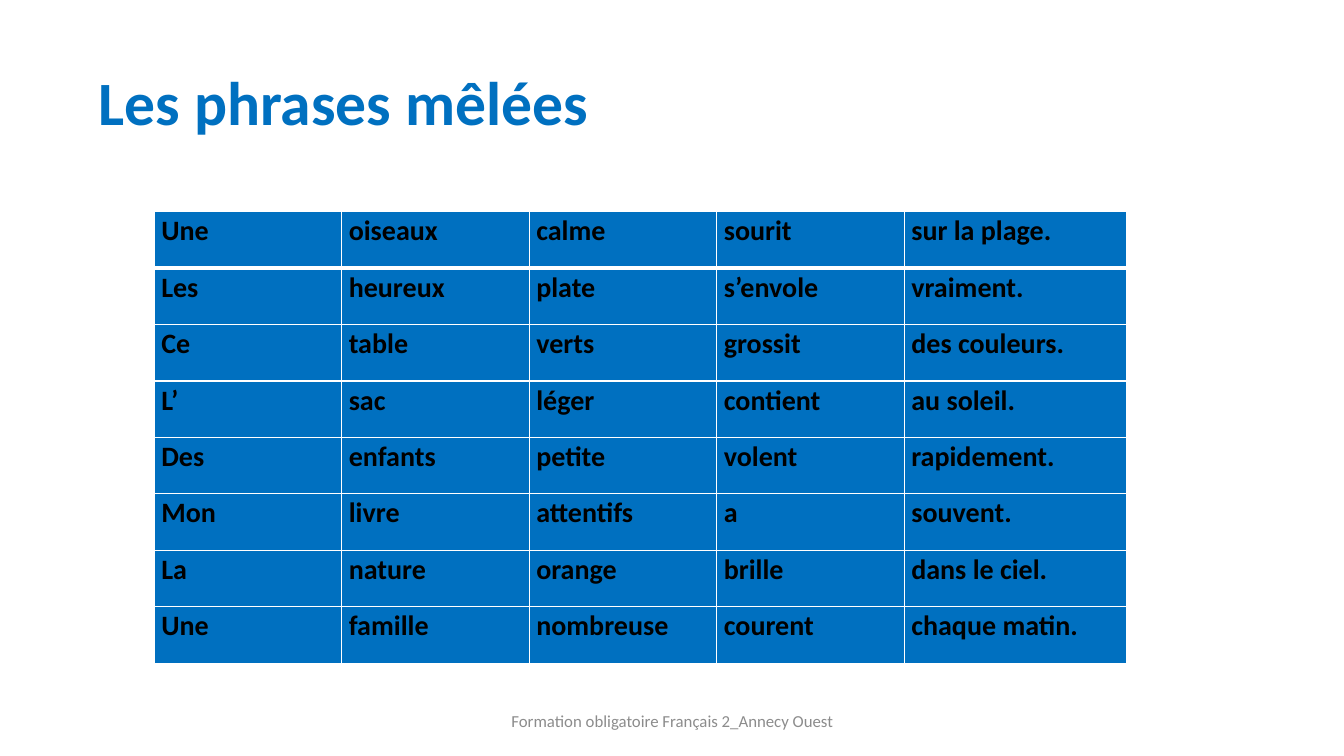
from dataclasses import dataclass

from lxml import etree
from pptx import Presentation
from pptx.dml.color import RGBColor
from pptx.enum import text as t
from pptx.oxml import ns
from pptx.util import Inches, Pt


@dataclass(frozen=True)
class Theme:
    font: str = "Calibri"
    blue: str = "0070C0"
    ink: str = "000000"
    grey: str = "8C8C8C"
    rule: str = "FFFFFF"
    title_size: int = 44
    word_size: int = 20
    footer_size: int = 12


THEME = Theme()

# Sentence parts: determiner, noun, adjective, verb, complement
SENTENCES = [
    ["Une", "oiseaux", "calme", "sourit", "sur la plage."],
    ["Les", "heureux", "plate", "s’envole", "vraiment."],
    ["Ce", "table", "verts", "grossit", "des couleurs."],
    ["L’", "sac", "léger", "contient", "au soleil."],
    ["Des", "enfants", "petite", "volent", "rapidement."],
    ["Mon", "livre", "attentifs", "a", "souvent."],
    ["La", "nature", "orange", "brille", "dans le ciel."],
    ["Une", "famille", "nombreuse", "courent", "chaque matin."],
]
COLUMN_WIDTHS = [1.86] * 4 + [2.2]
ROW_HEIGHT = 0.56


def write(frame, wording, size, color, bold=False, spacing=None, align=None):
    frame.text = wording
    paragraph = frame.paragraphs[0]
    paragraph.line_spacing = spacing
    paragraph.alignment = align
    for run in paragraph.runs:
        run.font.name = THEME.font
        run.font.size = Pt(size)
        run.font.bold = bold
        run.font.color.rgb = RGBColor.from_string(color)


def set_borders(cell, widths):
    """Draw the left, right, top and bottom borders, in points."""
    properties = cell._tc.get_or_add_tcPr()
    for side, width in zip("LRTB", widths):
        line = etree.SubElement(properties, ns.qn(f"a:ln{side}"), w=str(Pt(width)))
        fill = etree.SubElement(line, ns.qn("a:solidFill"))
        etree.SubElement(fill, ns.qn("a:srgbClr"), val=THEME.rule)


def add_title(slide, wording):
    title = slide.shapes.title
    title.left, title.top = Inches(0.88), Inches(0.32)
    title.width, title.height = Inches(11.5), Inches(1.45)
    title.text_frame.vertical_anchor = t.MSO_ANCHOR.MIDDLE
    write(title.text_frame, wording, THEME.title_size, THEME.blue,
          bold=True, spacing=0.9, align=t.PP_ALIGN.LEFT)


def add_word_table(slide, sentences):
    table = slide.shapes.add_table(
        len(sentences), len(COLUMN_WIDTHS), Inches(1.53), Inches(2.1),
        Inches(sum(COLUMN_WIDTHS)), Inches(ROW_HEIGHT * len(sentences))).table
    for column, width in zip(table.columns, COLUMN_WIDTHS):
        column.width = Inches(width)
    for row_index, words in enumerate(sentences):
        table.rows[row_index].height = Inches(ROW_HEIGHT)
        # A thicker rule separates the first row from the second
        top = 3 if row_index == 1 else 1
        bottom = 3 if row_index == 0 else 1
        for column_index, word in enumerate(words):
            cell = table.cell(row_index, column_index)
            cell.margin_left = cell.margin_right = Inches(0.07)
            cell.margin_top = cell.margin_bottom = 0
            set_borders(cell, (1, 1, top, bottom))
            cell.fill.solid()
            cell.fill.fore_color.rgb = RGBColor.from_string(THEME.blue)
            write(cell.text_frame, word, THEME.word_size, THEME.ink,
                  bold=True, spacing=1.07)


def add_footer(slide, wording):
    footer = slide.shapes.add_textbox(
        Inches(4.42), Inches(6.95), Inches(4.5), Inches(0.4))
    footer.text_frame.word_wrap = True
    footer.text_frame.vertical_anchor = t.MSO_ANCHOR.MIDDLE
    write(footer.text_frame, wording, THEME.footer_size, THEME.grey,
          align=t.PP_ALIGN.CENTER)


def main():
    deck = Presentation()
    deck.slide_width, deck.slide_height = Inches(13.33), Inches(7.5)
    slide = deck.slides.add_slide(deck.slide_layouts.get_by_name("Title Only"))
    add_title(slide, "Les phrases mêlées")
    add_word_table(slide, SENTENCES)
    add_footer(slide, "Formation obligatoire Français 2_Annecy Ouest")
    deck.save("out.pptx")


if __name__ == "__main__":
    main()
